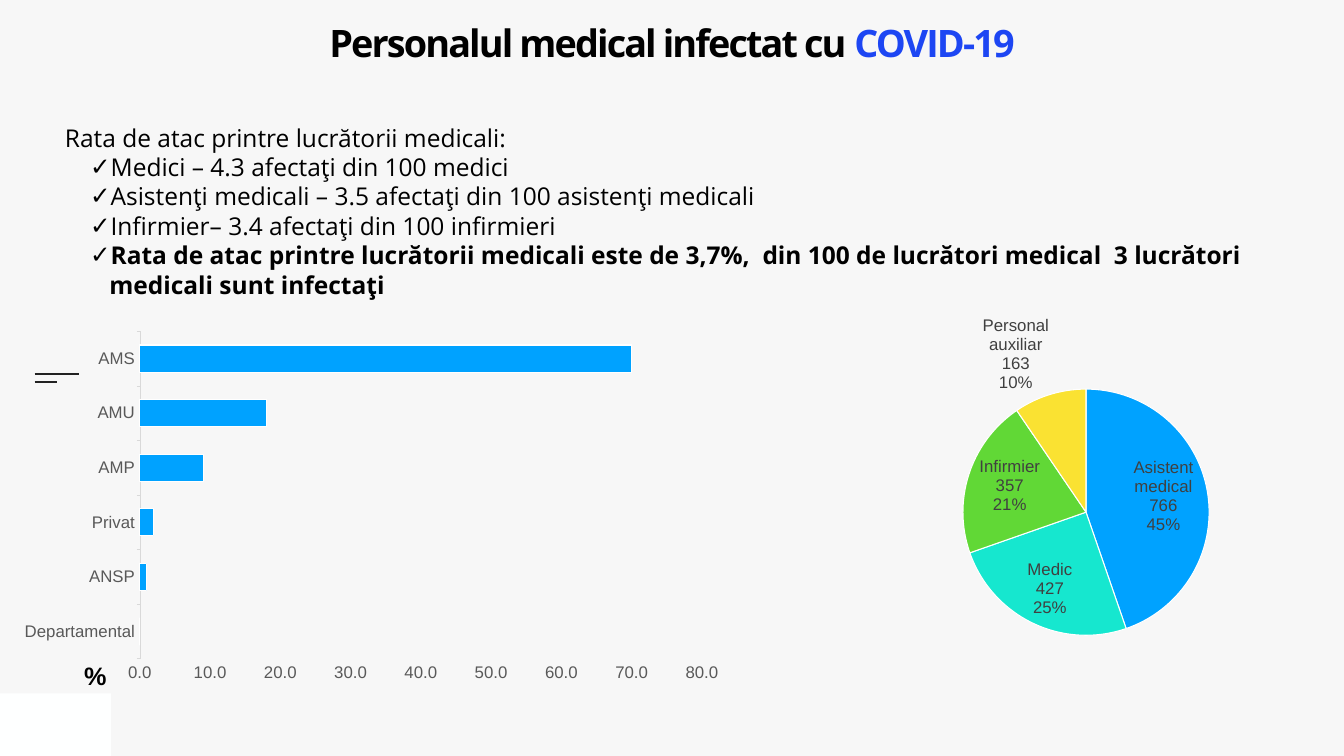
from dataclasses import dataclass

from lxml.etree import SubElement
from pptx import Presentation
from pptx.chart.data import CategoryChartData
from pptx.dml.color import RGBColor
from pptx.enum.chart import XL_CHART_TYPE as ChartType
from pptx.enum.chart import XL_LABEL_POSITION as LabelPos
from pptx.enum.chart import XL_TICK_MARK as Tick
from pptx.enum.shapes import MSO_CONNECTOR as Connector
from pptx.enum.shapes import MSO_SHAPE as Shape
from pptx.enum.text import MSO_ANCHOR as Anchor
from pptx.enum.text import MSO_AUTO_SIZE as AutoSize
from pptx.enum.text import PP_ALIGN as Align
from pptx.oxml.ns import qn
from pptx.util import Cm, Pt


@dataclass(frozen=True)
class Theme:
    heading_font: str = "Open Sans"
    chart_font: str = "Arial"
    background: str = "F7F7F7"
    white: str = "FEFFFF"
    border: str = "FFFFFF"
    ink: str = "000000"
    accent: str = "1D46F3"
    rule: str = "222222"
    axis_text: str = "595959"
    axis_line: str = "D9D9D9"
    label_text: str = "404040"
    bar: str = "00A2FF"
    slices: tuple = ("00A2FF", "16E7CF", "61D836", "FAE232")
    title_size: float = 54
    body_size: float = 35
    unit_size: float = 36
    chart_size: float = 24


THEME = Theme()
WIDTH, HEIGHT = 67.74, 38.1  # cm


def rgb(value):
    return RGBColor.from_string(value)


def style_font(font, face, size, color, bold=False):
    font.name, font.size, font.bold = face, Pt(size), bold
    font.color.rgb = rgb(color)


def add_text(paragraph, text, face=THEME.heading_font, size=THEME.body_size,
             color=THEME.ink, bold=False, tracking=None, align=Align.LEFT, spacing=1.0):
    run = paragraph.add_run()
    run.text = text
    style_font(run.font, face, size, color, bold)
    if tracking is not None:
        run.font._element.set("spc", str(round(tracking * 100)))
    paragraph.alignment, paragraph.line_spacing = align, spacing
    paragraph.space_before = paragraph.space_after = Pt(0)


def place(shape, box):
    shape.left, shape.top, shape.width, shape.height = map(Cm, box)


def set_frame(frame, margins, anchor=Anchor.TOP):
    frame.word_wrap, frame.auto_size = True, AutoSize.NONE
    frame.vertical_anchor = anchor
    (frame.margin_left, frame.margin_top,
     frame.margin_right, frame.margin_bottom) = map(Cm, margins)


def set_bullet(paragraph, mark=None, left=0.0, hanging=0.0):
    props = paragraph._p.get_or_add_pPr()
    props.set("marL", str(Cm(left)))
    props.set("indent", str(-Cm(hanging)))
    if mark:
        SubElement(props, qn("a:buChar"), char=mark)
    else:
        SubElement(props, qn("a:buNone"))


def add_decor(slide, box):
    """White corner block and the two short rules at the left edge."""
    left, top, width, height = box
    corner = slide.shapes.add_shape(
        Shape.RECTANGLE, Cm(left), Cm(top + height - 3.15), Cm(5.59), Cm(3.15))
    corner.shadow.inherit = False
    corner.fill.solid()
    corner.fill.fore_color.rgb = rgb(THEME.white)
    corner.line.fill.background()
    start = left + 1.75
    for y, length in ((18.83, 2.24), (19.27, 1.12)):
        rule = slide.shapes.add_connector(
            Connector.STRAIGHT, Cm(start), Cm(top + y), Cm(start + length), Cm(top + y))
        rule.line.color.rgb, rule.line.width = rgb(THEME.rule), Pt(3)
        SubElement(rule._element.spPr, qn("a:effectLst"))


def fill_title(slide, box):
    title = slide.shapes.title
    place(title, box)
    set_frame(title.text_frame, (0, 0, 0, 0))
    for text, color in (("Personalul medical infectat cu ", THEME.ink),
                        ("COVID-19", THEME.accent)):
        add_text(title.text_frame.paragraphs[0], text, size=THEME.title_size, color=color,
                 bold=True, tracking=-2.7, align=Align.CENTER, spacing=0.8)


def fill_attack_rates(slide, box):
    rates = slide.placeholders[1]
    place(rates, box)
    frame = rates.text_frame
    set_frame(frame, (0.25, 0.13, 0.25, 0.13))
    intro = frame.paragraphs[0]
    add_text(intro, "Rata de atac printre lucrătorii medicali:")
    set_bullet(intro)
    items = (
        "Medici – 4.3 afectaţi din 100 medici",
        "Asistenţi medicali – 3.5 afectaţi din 100 asistenţi medicali",
        "Infirmier– 3.4 afectaţi din 100 infirmieri",
        "Rata de atac printre lucrătorii medicali este de 3,7%,  din 100 de "
        "lucrători medical  3 lucrători medicali sunt infectaţi",
    )
    for item in items:
        paragraph = frame.add_paragraph()
        paragraph.level = 1
        add_text(paragraph, item, bold=item == items[-1])
        set_bullet(paragraph, "✓", left=2.24, hanging=0.97)


def add_chart(slide, box, kind, categories, values, plot_area):
    """Chart with one series; plot_area is x, y, w, h as shares of the box."""
    data = CategoryChartData()
    data.categories = categories
    data.add_series("Series 1", values)
    chart = slide.shapes.add_chart(kind, *map(Cm, box), data).chart
    chart.has_title = chart.has_legend = False
    style_font(chart.font, THEME.chart_font, THEME.chart_size, THEME.axis_text)
    area = chart._chartSpace.chart.plotArea
    layout = area.find(qn("c:layout"))
    if layout is None:
        layout = area.makeelement(qn("c:layout"))
        area.insert(0, layout)
    manual = SubElement(layout, qn("c:manualLayout"))
    settings = [("layoutTarget", "inner"), ("xMode", "edge"), ("yMode", "edge")]
    for tag, value in settings + list(zip("xywh", plot_area)):
        SubElement(manual, qn(f"c:{tag}"), val=str(value))
    return chart


def outline(fmt, color, width):
    fmt.line.color.rgb, fmt.line.width = rgb(color), Pt(width)


def add_institution_bars(slide, box):
    chart = add_chart(
        slide, box, ChartType.BAR_CLUSTERED,
        ("Departamental", "ANSP", "Privat", "AMP", "AMU", "AMS"),
        (0, 1, 2, 9, 18, 70), (0.18, 0.02, 0.78, 0.89))
    plot = chart.plots[0]
    plot.gap_width, plot.vary_by_categories = 100, False
    fmt = plot.series[0].format
    fmt.fill.solid()
    fmt.fill.fore_color.rgb = rgb(THEME.bar)
    outline(fmt, THEME.border, 1.5)
    for axis in (chart.category_axis, chart.value_axis):
        style_font(axis.tick_labels.font, THEME.chart_font, THEME.chart_size, THEME.axis_text)
        axis.has_major_gridlines = False
        axis.major_tick_mark, axis.minor_tick_mark = Tick.OUTSIDE, Tick.NONE
    outline(chart.category_axis.format, THEME.axis_line, 0.75)
    percent = chart.value_axis
    percent.minimum_scale, percent.maximum_scale, percent.major_unit = 0, 80, 10
    percent.format.line.fill.background()
    percent.tick_labels.number_format = "0.0"
    percent.tick_labels.number_format_is_linked = False


def add_unit(slide, box):
    unit = slide.shapes.add_textbox(*map(Cm, box))
    set_frame(unit.text_frame, (0.15,) * 4, Anchor.MIDDLE)
    add_text(unit.text_frame.paragraphs[0], "%", face=THEME.chart_font,
             size=THEME.unit_size, bold=True, align=Align.CENTER)


def add_staff_pie(slide, box):
    chart = add_chart(
        slide, box, ChartType.PIE,
        ("Asistent medical", "Medic", "Infirmier", "Personal auxiliar"),
        (766, 427, 357, 163), (0.24, 0.21, 0.57, 0.64))
    staff = chart.plots[0].series[0]
    for index, color in enumerate(THEME.slices):
        fmt = staff.points[index].format
        fmt.fill.solid()
        fmt.fill.fore_color.rgb = rgb(color)
        outline(fmt, THEME.border, 1.5)
    labels = staff.data_labels
    labels.show_value = labels.show_percentage = labels.show_category_name = True
    labels.position = LabelPos.BEST_FIT
    style_font(labels.font, THEME.chart_font, THEME.chart_size, THEME.label_text)
    # One label part per line
    bubble = labels._element.find(qn("c:showBubbleSize"))
    separator = bubble.makeelement(qn("c:separator"))
    separator.text = "\n"
    bubble.addnext(separator)


def main():
    deck = Presentation()
    deck.slide_width, deck.slide_height = Cm(WIDTH), Cm(HEIGHT)
    slide = deck.slides.add_slide(deck.slide_layouts[1])
    slide.background.fill.solid()
    slide.background.fill.fore_color.rgb = rgb(THEME.background)
    add_decor(slide, (0, 0, WIDTH, HEIGHT))
    add_institution_bars(slide, (0.51, 16.33, 36.32, 18.54))
    fill_title(slide, (0, 1.42, WIDTH, 2.06))
    fill_attack_rates(slide, (3.02, 6.05, 64.72, 7.75))
    add_unit(slide, (-1.45, 33.15, 12.52, 1.83))
    add_staff_pie(slide, (43.31, 15.49, 21.77, 19.48))
    deck.save("out.pptx")


if __name__ == "__main__":
    main()
